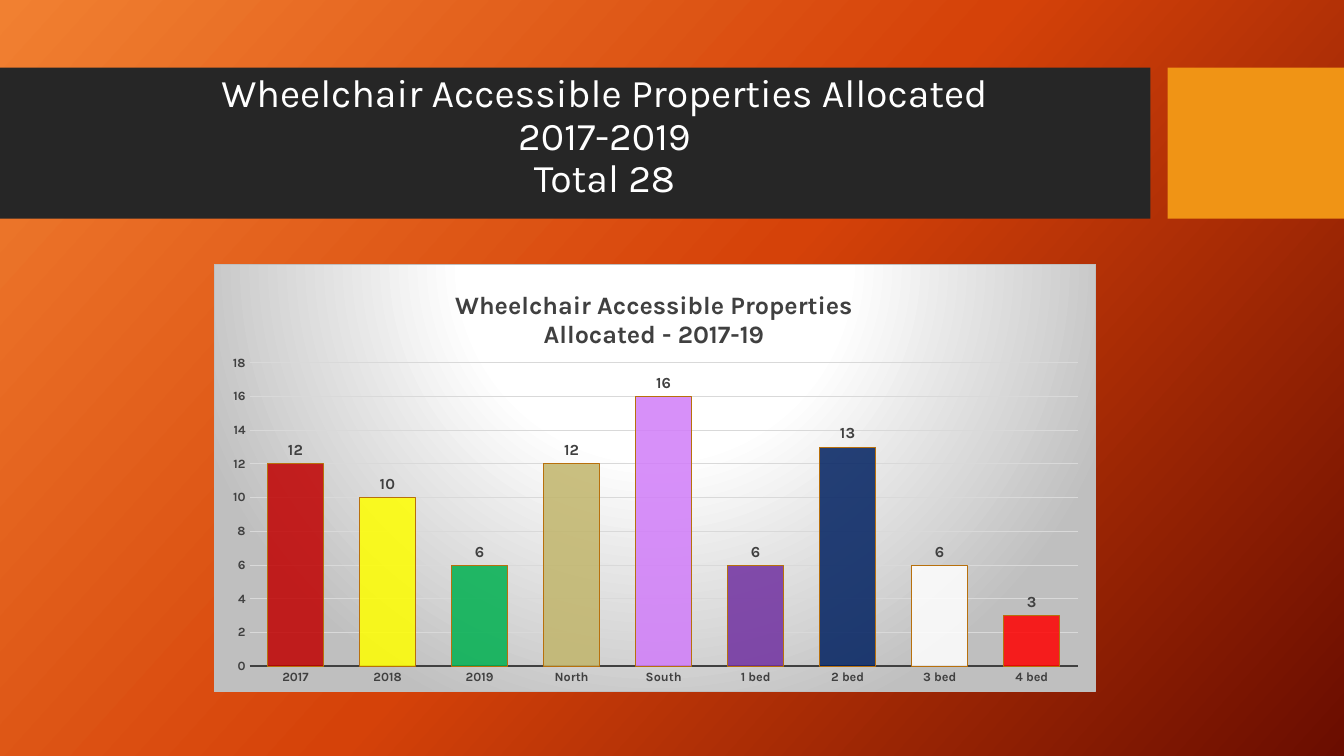
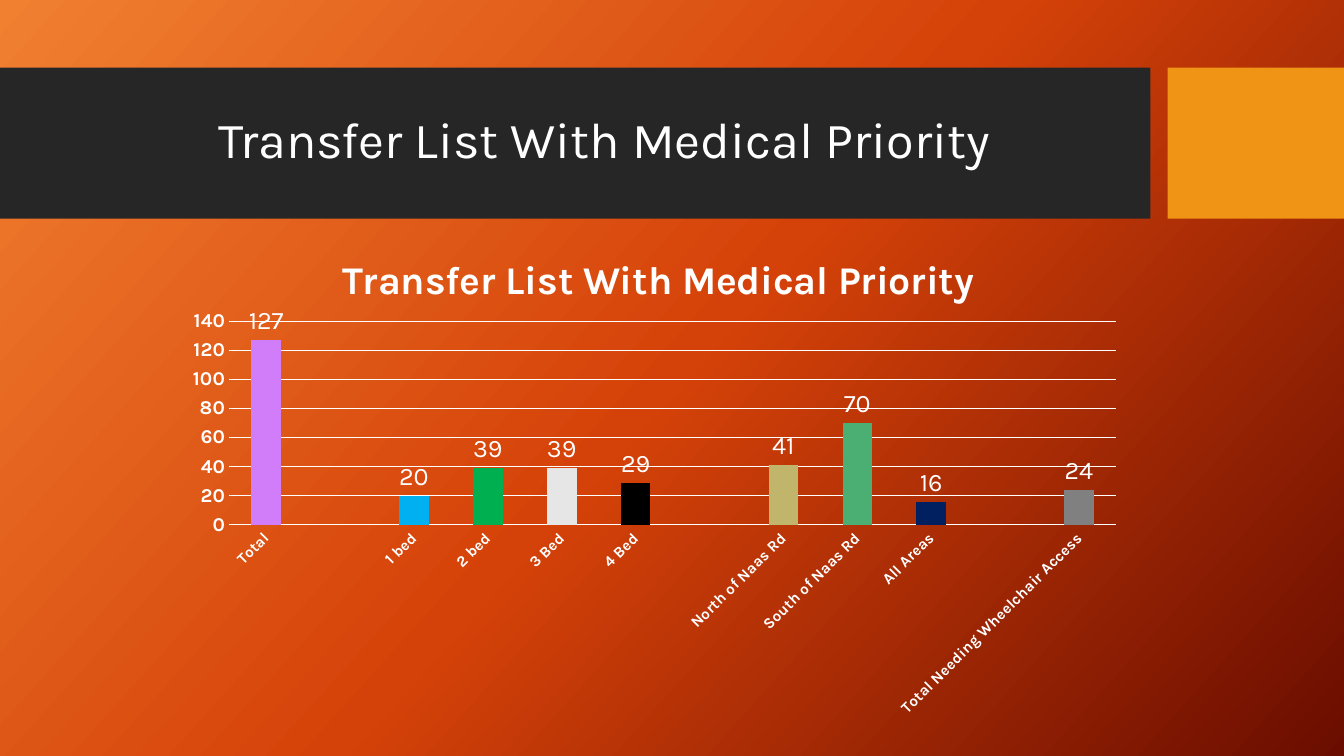
from pptx import Presentation
from pptx.chart.data import CategoryChartData
from pptx.dml.color import RGBColor
from pptx.enum.chart import XL_CHART_TYPE, XL_LABEL_POSITION, XL_TICK_MARK
from pptx.enum.shapes import MSO_SHAPE
from pptx.enum.text import MSO_ANCHOR, MSO_AUTO_SIZE, PP_ALIGN
from pptx.oxml import parse_xml
from pptx.oxml.ns import nsdecls, qn
from pptx.util import Inches, Pt

COLUMNS = XL_CHART_TYPE.COLUMN_CLUSTERED
OUTSIDE = XL_LABEL_POSITION.OUTSIDE_END
NO_TICK = XL_TICK_MARK.NONE
RECT = MSO_SHAPE.RECTANGLE
MIDDLE = MSO_ANCHOR.MIDDLE
NO_FIT = MSO_AUTO_SIZE.NONE
CENTER = PP_ALIGN.CENTER

FONT = "Karla"
WHITE = RGBColor(0xFF, 0xFF, 0xFF)
BLACK = RGBColor(0x00, 0x00, 0x00)
CHARCOAL = RGBColor(0x26, 0x26, 0x26)
ORANGE = RGBColor(0xF0, 0x94, 0x15)
BRONZE = RGBColor(0xB8, 0x70, 0x0C)
DARK_GREY = RGBColor(0x40, 0x40, 0x40)
MID_GREY = RGBColor(0x80, 0x80, 0x80)
SILVER = RGBColor(0xBF, 0xBF, 0xBF)
GRID_GREY = RGBColor(0xD9, 0xD9, 0xD9)
PALE_GREY = RGBColor(0xE7, 0xE6, 0xE6)
CRIMSON = RGBColor(0xC0, 0x00, 0x00)
RED = RGBColor(0xFF, 0x00, 0x00)
YELLOW = RGBColor(0xFF, 0xFF, 0x00)
GREEN = RGBColor(0x00, 0xB0, 0x50)
SEA_GREEN = RGBColor(0x4B, 0xAF, 0x73)
KHAKI = RGBColor(0xC1, 0xB5, 0x6B)
LILAC = RGBColor(0xD1, 0x7D, 0xF9)
PURPLE = RGBColor(0x70, 0x30, 0xA0)
NAVY = RGBColor(0x00, 0x20, 0x60)
SKY = RGBColor(0x00, 0xB0, 0xF0)
BACKDROP = [(0, RGBColor(0xF1, 0x80, 0x31)), (50, RGBColor(0xD5, 0x42, 0x09)),
            (100, RGBColor(0x6A, 0x0D, 0x00))]
SPOTLIGHT = [(0, WHITE), (39, WHITE), (100, SILVER)]

LINEAR = '<a:lin ang="2520000" scaled="0"/>'
RADIAL = ('<a:path path="circle"><a:fillToRect l="50000" t="-80000" '
          'r="50000" b="180000"/></a:path>')


def gradient(stops, shading):
    gs = "".join(f'<a:gs pos="{pos * 1000}"><a:srgbClr val="{color}"/></a:gs>'
                 for pos, color in stops)
    return (f'<a:gradFill {nsdecls("a")} rotWithShape="1"><a:gsLst>{gs}</a:gsLst>'
            f'{shading}</a:gradFill>')


def set_backdrop(master):
    fill = master.background.fill
    fill.solid()
    fill.fore_color.rgb = ORANGE
    solid = next(master.element.iter(qn("a:solidFill")))
    solid.getparent().replace(solid, parse_xml(gradient(BACKDROP, LINEAR)))


def add_band(s, box, color):
    sp = s.shapes.add_shape(RECT, *map(Inches, box))
    sp.shadow.inherit = False
    sp.fill.solid()
    sp.fill.fore_color.rgb = color
    sp.line.fill.background()


def set_font(font, size, color, bold=False):
    font.name = FONT
    font.size = Pt(size)
    font.bold = bold
    font.color.rgb = color


def add_titled_slide(prs, text, size, height):
    s = prs.slides.add_slide(prs.slide_layouts[5])
    add_band(s, (0, 0.67, 11.41, 1.5), CHARCOAL)
    add_band(s, (11.58, 0.67, 1.75, 1.5), ORANGE)
    title = s.shapes.title
    title.element.getparent().append(title.element)
    title.left, title.top, title.width, title.height = map(
        Inches, (0.74, 0.82, 10.51, height))
    tf = title.text_frame
    tf.auto_size = NO_FIT
    tf.word_wrap = True
    tf.vertical_anchor = MIDDLE
    tf.text = text
    p = tf.paragraphs[0]
    p.alignment = CENTER
    p.line_spacing = 0.9
    set_font(p.font, size, WHITE)
    return s


def manual_layout(target, **shares):
    modes = "".join(f'<c:{axis}Mode val="edge"/>' for axis in "xy")
    values = "".join(f'<c:{key} val="{share}"/>' for key, share in shares.items())
    target = f'<c:layoutTarget val="{target}"/>' if target else ""
    return parse_xml(f'<c:layout {nsdecls("c")}><c:manualLayout>{target}{modes}'
                     f'{values}</c:manualLayout></c:layout>')


def place(parent, index, layout):
    for old in parent.findall(qn("c:layout")):
        parent.remove(old)
    parent.insert(index, layout)


def set_panel(chart, fill, line):
    chart.element.find(qn("c:chart")).addnext(parse_xml(
        f'<c:spPr {nsdecls("c", "a")}>{fill}<a:ln w="9525">{line}</a:ln></c:spPr>'))


def format_axis(axis, size, color):
    axis.major_tick_mark = axis.minor_tick_mark = NO_TICK
    axis.format.line.fill.background()
    set_font(axis.tick_labels.font, size, color, True)


def add_column_chart(s, box, data, title, title_size, title_at, plot_at, color,
                     axis_sizes, label_size, label_bold, grid, top, step, gap):
    cd = CategoryChartData()
    cd.categories = [name for name, _, _ in data]
    cd.add_series("Series 1", [value for _, value, _ in data])
    chart = s.shapes.add_chart(COLUMNS, *map(Inches, box), cd).chart
    set_font(chart.font, 10, color)
    chart.has_legend = False
    chart.has_title = True
    tf = chart.chart_title.text_frame
    tf.text = title
    for p in tf.paragraphs:
        set_font(p.font, title_size, color, True)
    chart.chart_title.include_in_layout = False
    place(chart.chart_title.element, 1,
          manual_layout(None, x=title_at[0], y=title_at[1]))
    place(chart.element.find(".//" + qn("c:plotArea")), 0,
          manual_layout("inner", **dict(zip("xywh", plot_at))))

    format_axis(chart.category_axis, axis_sizes[0], color)
    axis = chart.value_axis
    format_axis(axis, axis_sizes[1], color)
    axis.minimum_scale, axis.maximum_scale, axis.major_unit = 0, top, step
    axis.has_major_gridlines = True
    axis.major_gridlines.format.line.color.rgb = grid
    axis.major_gridlines.format.line.width = Pt(0.75)

    plot = chart.plots[0]
    plot.gap_width = gap
    plot.vary_by_categories = False
    plot.has_data_labels = True
    labels = plot.data_labels
    labels.show_value = True
    labels.position = OUTSIDE
    set_font(labels.font, label_size, color, label_bold)
    series = plot.series[0]
    series.format.fill.solid()
    series.format.fill.fore_color.rgb = ORANGE
    for i, (_, _, bar) in enumerate(data):
        if bar is not None:
            fill = series.points[i].format.fill
            fill.solid()
            fill.fore_color.rgb = bar
    return chart


def outline_bars(series, count):
    for i in range(count):
        line = series.points[i].format.line
        line.color.rgb = BRONZE
        line.width = Pt(0.75)
    for dpt in series._element.findall(qn("c:dPt")):
        color = dpt.find(f'{qn("c:spPr")}/{qn("a:solidFill")}/{qn("a:srgbClr")}')
        color.append(parse_xml(f'<a:alpha {nsdecls("a")} val="85000"/>'))


def allocations_slide(prs):
    s = add_titled_slide(
        prs, "Wheelchair Accessible Properties Allocated\v2017-2019\vTotal 28", 28, 1.09)
    data = [("2017", 12, CRIMSON), ("2018", 10, YELLOW), ("2019", 6, GREEN),
            ("North", 12, KHAKI), ("South", 16, LILAC), ("1 bed", 6, PURPLE),
            ("2 bed", 13, NAVY), ("3 bed", 6, WHITE), ("4 bed", 3, RED)]
    chart = add_column_chart(
        s, (2.12, 2.62, 8.75, 4.25), data,
        "Wheelchair Accessible Properties\nAllocated - 2017-19", 18, (0.27, 0.05),
        (0.04, 0.23, 0.94, 0.71), DARK_GREY, (9, 9), 11, True, GRID_GREY, 18, 2, 65)
    set_panel(chart, gradient(SPOTLIGHT, RADIAL),
              f'<a:solidFill><a:srgbClr val="{SILVER}"/></a:solidFill>')
    line = chart.category_axis.format.line
    line.color.rgb = DARK_GREY
    line.width = Pt(1.5)
    outline_bars(chart.plots[0].series[0], len(data))


def transfers_slide(prs):
    s = add_titled_slide(prs, "Transfer List With Medical Priority", 36, 1.18)
    gap = ("", None, None)
    data = [("Total", 127, LILAC), gap, ("1 bed", 20, SKY), ("2 bed", 39, GREEN),
            ("3 Bed", 39, PALE_GREY), ("4 Bed", 29, BLACK), gap,
            ("North of Naas Rd", 41, KHAKI), ("South of Naas Rd", 70, SEA_GREEN),
            ("All Areas", 16, NAVY), gap,
            ("Total Needing Wheelchair Access", 24, MID_GREY)]
    chart = add_column_chart(
        s, (1.7, 2.25, 9.56, 4.93), data,
        "Transfer List With Medical Priority", 28, (0.17, 0.04),
        (0.06, 0.19, 0.92, 0.41), WHITE, (11, 14), 18, False, WHITE, 140, 20, 150)
    set_panel(chart, "<a:noFill/>", "<a:noFill/>")
    body = chart.category_axis._element.find(f'{qn("c:txPr")}/{qn("a:bodyPr")}')
    body.set("rot", "-2700000")
    body.set("vert", "horz")


def main():
    prs = Presentation()
    prs.slide_width, prs.slide_height = Inches(13.33), Inches(7.5)
    set_backdrop(prs.slide_master)
    allocations_slide(prs)
    transfers_slide(prs)
    prs.save("out.pptx")


if __name__ == "__main__":
    main()
